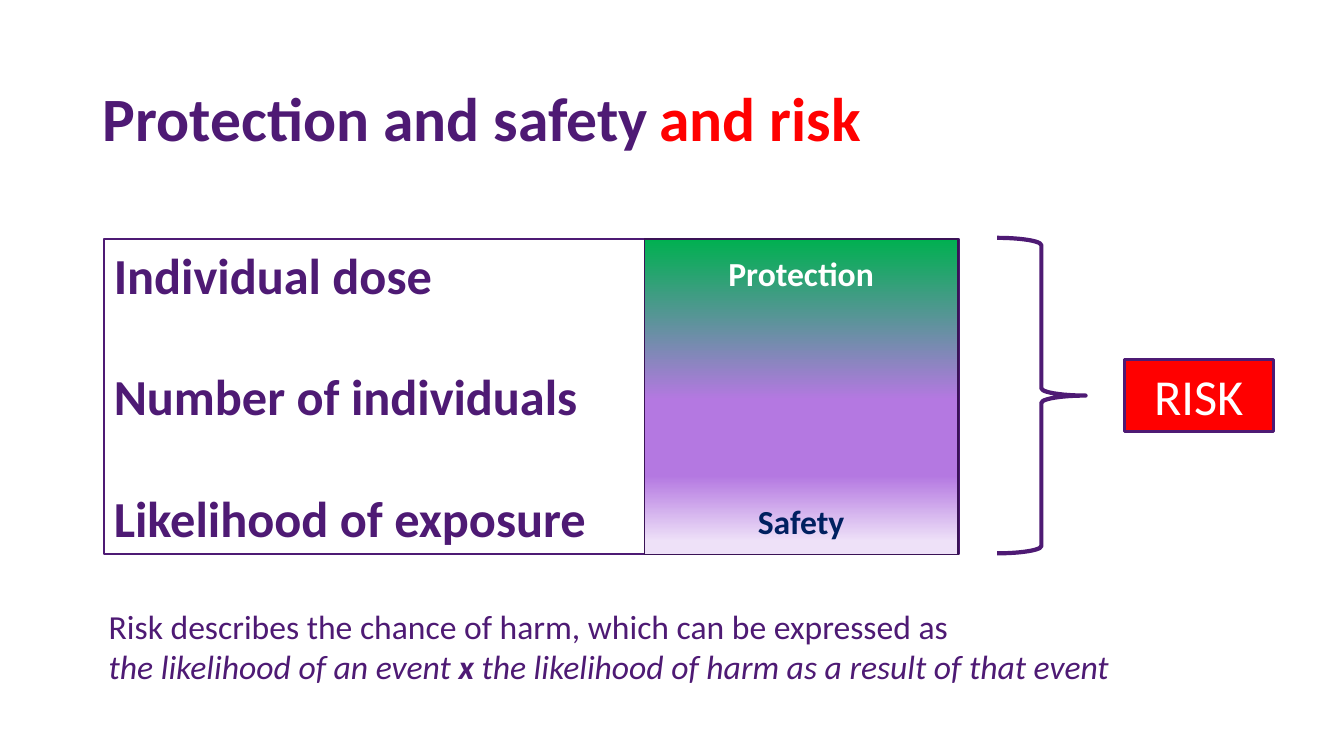
from lxml.etree import SubElement
from pptx import Presentation
from pptx.dml.color import RGBColor
from pptx.enum.shapes import MSO_SHAPE
from pptx.enum.text import MSO_ANCHOR, PP_ALIGN
from pptx.oxml.ns import qn
from pptx.util import Inches, Pt

COLORS = {
    "purple": "4E1A74",
    "dark_purple": "3A1356",
    "lilac": "B478E1",
    "pale_lilac": "EEE1F8",
    "green": "00B050",
    "navy": "002060",
    "red": "FF0000",
    "white": "FFFFFF",
}
FONT = "Calibri"
SLIDE_WIDTH, SLIDE_HEIGHT = 13.33, 7.5
SCALE = [(0, "green"), (51, "lilac"), (75, "lilac"), (96, "pale_lilac")]


def color(name):
    return RGBColor.from_string(COLORS[name])


def format_text(text_frame, size, color_name, bold=False, align=PP_ALIGN.LEFT):
    text_frame.word_wrap = True
    for paragraph in text_frame.paragraphs:
        paragraph.alignment = align
        for run in paragraph.runs:
            run.font.name = FONT
            run.font.size = Pt(size)
            run.font.bold = bold
            run.font.color.rgb = color(color_name)


def add_text(slide, box, text, size, color_name, bold=False, align=PP_ALIGN.LEFT):
    shape = slide.shapes.add_textbox(*map(Inches, box))
    shape.text_frame.text = text
    format_text(shape.text_frame, size, color_name, bold, align)
    return shape.text_frame


def add_outlined(slide, kind, box, line_name, line_width):
    shape = slide.shapes.add_shape(kind, *map(Inches, box))
    shape.shadow.inherit = False
    shape.fill.background()
    shape.line.color.rgb = color(line_name)
    shape.line.width = Pt(line_width)
    return shape


def fill_scale(shape):
    shape.fill.gradient()
    shape.fill.gradient_angle = 270
    stops = shape.fill._fill._gradFill.find(qn("a:gsLst"))
    for stop in list(stops):
        stops.remove(stop)
    for position, name in SCALE:
        stop = SubElement(stops, qn("a:gs"), pos=str(position * 1000))
        SubElement(stop, qn("a:srgbClr"), val=COLORS[name])


def build_title(slide, box):
    left, top, width, height = box
    right_part = left + 0.48 * width
    parts = [("Protection and safety", "purple", left, width),
             ("and risk", "red", right_part, left + width - right_part)]
    for text, name, part_left, part_width in parts:
        frame = add_text(slide, (part_left, top, part_width, height), text, 44, name, True)
        frame.vertical_anchor = MSO_ANCHOR.MIDDLE
        frame.paragraphs[0].line_spacing = 1.1


def build_factors(slide, box):
    left, top, width, height = box
    panel = add_outlined(slide, MSO_SHAPE.RECTANGLE, box, "purple", 1.5)
    frame = panel.text_frame
    frame.text = "Individual dose\nNumber of individuals\nLikelihood of exposure"
    frame.vertical_anchor = MSO_ANCHOR.TOP
    format_text(frame, 36, "purple", True)
    for paragraph in frame.paragraphs[1:]:
        paragraph.space_before = Pt(43.5)

    scale_left, scale_width = left + 0.632 * width, 0.367 * width
    scale = add_outlined(slide, MSO_SHAPE.RECTANGLE, (scale_left, top, scale_width, height),
                         "dark_purple", 1)
    fill_scale(scale)
    label_height = 0.5
    labels = [("Protection", "white", top + 0.09),
              ("Safety", "navy", top + height - label_height - 0.08)]
    for text, name, label_top in labels:
        add_text(slide, (scale_left, label_top, scale_width, label_height),
                 text, 24, name, True, PP_ALIGN.CENTER)


def build_risk(slide, box):
    left, top, width, height = box
    add_outlined(slide, MSO_SHAPE.RIGHT_BRACE, (left, top, 0.32 * width, height), "purple", 3)
    result_width, result_height = 0.54 * width, 0.71
    result = add_outlined(slide, MSO_SHAPE.RECTANGLE,
                          (left + width - result_width, top + (height - result_height) / 2,
                           result_width, result_height), "purple", 2.25)
    result.fill.solid()
    result.fill.fore_color.rgb = color("red")
    result.text_frame.text = "RISK"
    result.text_frame.vertical_anchor = MSO_ANCHOR.TOP
    format_text(result.text_frame, 36, "white", align=PP_ALIGN.CENTER)


def build_definition(slide, box):
    frame = add_text(slide, box, "Risk describes the chance of harm, which can be expressed as",
                     24, "purple")
    formula = frame.add_paragraph()
    for text in ("the likelihood of an event ", "x ",
                 "the likelihood of harm as a result of that event"):
        formula.add_run().text = text
    format_text(frame, 24, "purple")
    for run in formula.runs:
        run.font.italic = True
    formula.runs[1].font.bold = True


def main():
    presentation = Presentation()
    presentation.slide_width = Inches(SLIDE_WIDTH)
    presentation.slide_height = Inches(SLIDE_HEIGHT)
    slide = presentation.slides.add_slide(presentation.slide_layouts[6])
    build_title(slide, (0.92, 0.4, 11.5, 1.45))
    build_factors(slide, (1.03, 2.37, 8.48, 3.13))
    build_risk(slide, (9.89, 2.36, 2.74, 3.13))
    build_definition(slide, (0.98, 5.96, 11.66, 0.91))
    presentation.save("out.pptx")


if __name__ == "__main__":
    main()
